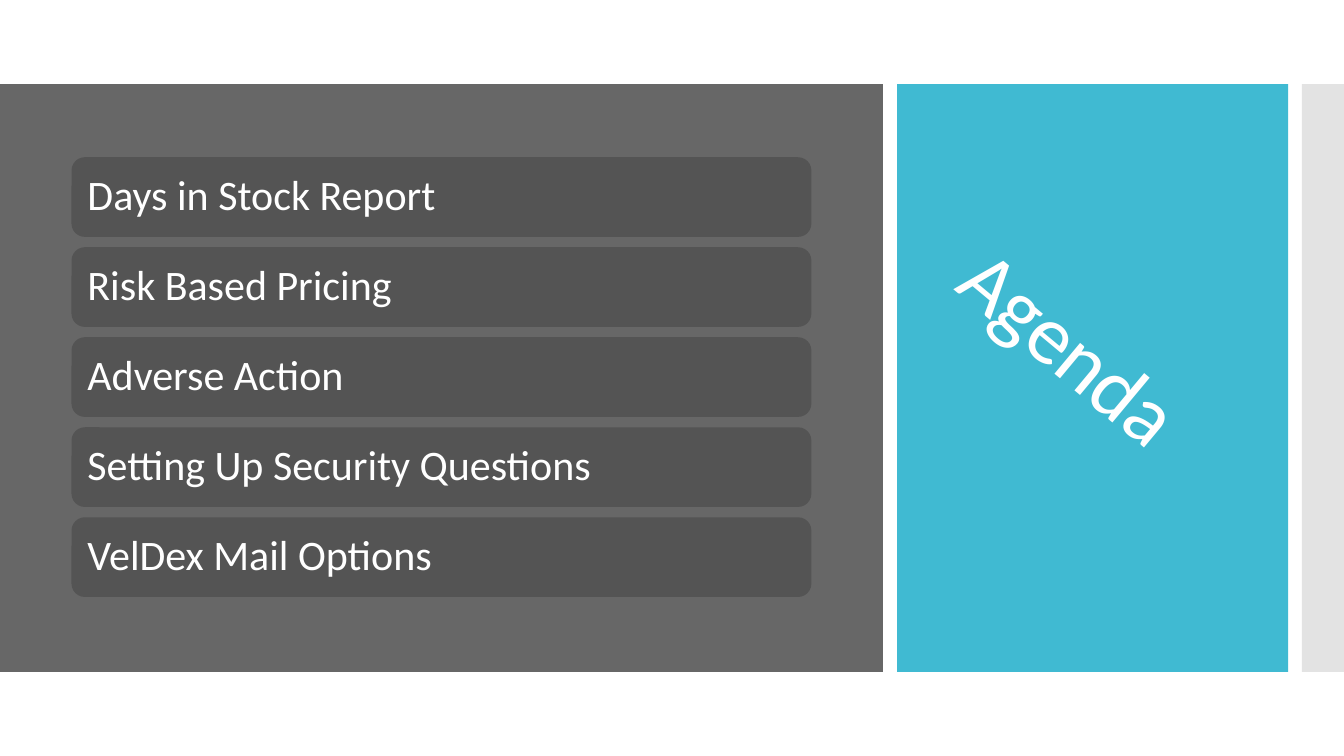
"""Build the agenda slide: three colour panels, a tilted title and a list of topics."""
from dataclasses import dataclass
from typing import Optional

import lxml.etree
import pptx
import pptx.dml.color
import pptx.enum.shapes
import pptx.enum.text
import pptx.oxml.ns
import pptx.util

COLS, ROWS = 96, 54
UNIT = pptx.util.Inches(7.5) / ROWS
FONT = "Calibri"
COLORS = {"panel": "676767", "accent": "40BAD2", "edge": "C8C8C8",
          "topic": "545454", "text": "FFFFFF"}
TOPICS = ["Days in Stock Report", "Risk Based Pricing", "Adverse Action",
          "Setting Up Security Questions", "VelDex Mail Options"]
TOPIC_TOP, TOPIC_PITCH = 11.23, 6.43


@dataclass
class Box:
    col: float
    row: float
    cols: float
    rows: float
    color: str
    rounded: bool = False
    alpha: Optional[int] = None


PANELS = [
    Box(0, 6, 63.07, 42, "panel"),
    Box(64.08, 6, 27.94, 42, "accent"),
    Box(93, 6, 3, 42, "edge", alpha=50),
]


def grid(n: float) -> pptx.util.Emu:
    return pptx.util.Emu(round(n * UNIT))


def rgb(name: str) -> pptx.dml.color.RGBColor:
    return pptx.dml.color.RGBColor.from_string(COLORS[name])


def add_box(s: pptx.slide.Slide, box: Box) -> pptx.shapes.autoshape.Shape:
    kinds = pptx.enum.shapes.MSO_SHAPE
    kind = kinds.ROUNDED_RECTANGLE if box.rounded else kinds.RECTANGLE
    sp = s.shapes.add_shape(kind, grid(box.col), grid(box.row), grid(box.cols), grid(box.rows))
    sp.shadow.inherit = False
    sp.fill.solid()
    sp.fill.fore_color.rgb = rgb(box.color)
    sp.line.fill.background()
    if box.alpha is not None:
        clr = sp.element.spPr.find(".//" + pptx.oxml.ns.qn("a:srgbClr"))
        alpha = lxml.etree.SubElement(clr, pptx.oxml.ns.qn("a:alpha"))
        alpha.set("val", str(box.alpha * 1000))
    return sp


def write(sp: pptx.shapes.base.BaseShape, text: str, size: float) -> pptx.text.text._Run:
    tf = sp.text_frame
    tf.text = text
    tf.word_wrap = True
    tf.auto_size = pptx.enum.text.MSO_AUTO_SIZE.NONE
    tf.vertical_anchor = pptx.enum.text.MSO_ANCHOR.MIDDLE
    p = tf.paragraphs[0]
    p.alignment = pptx.enum.text.PP_ALIGN.LEFT
    p.line_spacing = 0.9
    r = p.runs[0]
    r.font.name = FONT
    r.font.size = pptx.util.Pt(size)
    r.font.color.rgb = rgb("text")
    return r


def add_title(s: pptx.slide.Slide, text: str) -> None:
    sp = s.shapes.title
    sp.left, sp.top = grid(66.1), grid(22.82)
    sp.width, sp.height = grid(23.18), grid(6.62)
    sp.rotation = 39.8
    r = write(sp, text, 60)
    r.font._element.set("spc", "-60")
    sp.element.getparent().append(sp.element)


def add_topic(s: pptx.slide.Slide, index: int, text: str) -> None:
    row = TOPIC_TOP + index * TOPIC_PITCH
    sp = add_box(s, Box(5.11, row, 52.85, 5.69, "topic", rounded=True))
    write(sp, text, 30)
    tf = sp.text_frame
    tf.margin_left = tf.margin_right = pptx.util.Inches(0.12)


def main() -> None:
    prs = pptx.Presentation()
    prs.slide_width, prs.slide_height = grid(COLS), grid(ROWS)
    s = prs.slides.add_slide(prs.slide_layouts.get_by_name("Title Only"))
    for panel in PANELS:
        add_box(s, panel)
    add_title(s, "Agenda")
    for index, topic in enumerate(TOPICS):
        add_topic(s, index, topic)
    prs.save("out.pptx")


if __name__ == "__main__":
    main()
